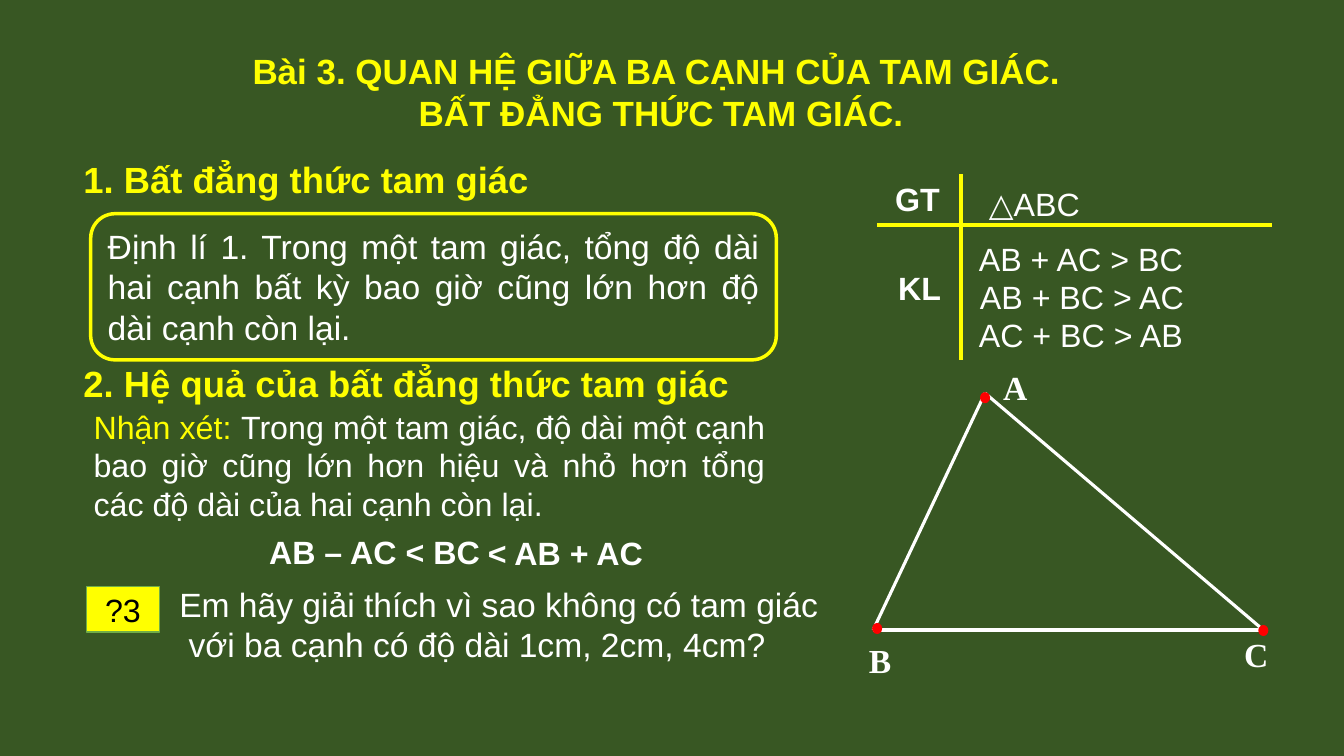
from lxml import etree
from pptx import Presentation
from pptx.dml.color import RGBColor
from pptx.enum.shapes import MSO_CONNECTOR, MSO_SHAPE
from pptx.enum.text import MSO_ANCHOR, PP_ALIGN
from pptx.oxml.ns import qn
from pptx.util import Inches, Pt

COLORS = {
    "board": "385723",
    "yellow": "FFFF00",
    "white": "FFFFFF",
    "black": "000000",
    "green": "70AD47",
    "red": "FF0000",
}
COLORS = {name: RGBColor.from_string(value) for name, value in COLORS.items()}


def write_text(shape, lines, size, color="white", bold=False,
               align=PP_ALIGN.LEFT, font="Arial"):
    frame = shape.text_frame
    frame.word_wrap = True
    frame.text = "\n".join(lines)
    for paragraph in frame.paragraphs:
        paragraph.alignment = align
        paragraph.font.name = font
        paragraph.font.size = Pt(size)
        paragraph.font.bold = bold
        paragraph.font.color.rgb = COLORS[color]
    return frame


def add_line(start, end, color, width):
    line = slide.shapes.add_connector(
        MSO_CONNECTOR.STRAIGHT, *[Inches(value) for value in start + end])
    line.line.color.rgb = COLORS[color]
    line.line.width = Pt(width)
    etree.SubElement(line._element.spPr, qn("a:effectLst"))


presentation = Presentation()
presentation.slide_width = Inches(13.33)
presentation.slide_height = Inches(7.5)
slide = presentation.slides.add_slide(presentation.slide_layouts[6])
slide.background.fill.solid()
slide.background.fill.fore_color.rgb = COLORS["board"]

title = slide.shapes.add_textbox(Inches(2.37), Inches(0.44), Inches(8.37), Inches(0.94))
write_text(title, ["Bài 3. QUAN HỆ GIỮA BA CẠNH CỦA TAM GIÁC. ",
                   "BẤT ĐẲNG THỨC TAM GIÁC."],
           25, "yellow", True, PP_ALIGN.CENTER)

headings = [
    ("1. Bất đẳng thức tam giác", 1.51),
    ("2. Hệ quả của bất đẳng thức tam giác", 3.53),
]
for text, top in headings:
    heading = slide.shapes.add_textbox(Inches(0.73), Inches(top), Inches(6.8), Inches(0.54))
    write_text(heading, [text], 26, "yellow", True)

theorem = slide.shapes.add_shape(
    MSO_SHAPE.ROUNDED_RECTANGLE, Inches(0.9), Inches(2.12), Inches(6.8), Inches(1.45))
theorem.shadow.inherit = False
theorem.fill.background()
theorem.line.color.rgb = COLORS["yellow"]
theorem.line.width = Pt(2.5)
frame = write_text(theorem, ["Định lí 1. Trong một tam giác, tổng độ dài hai cạnh bất kỳ "
                             "bao giờ cũng lớn hơn độ dài cạnh còn lại."],
                   24, align=PP_ALIGN.JUSTIFY)
frame.vertical_anchor = MSO_ANCHOR.TOP
frame.paragraphs[0].space_before = Pt(12)
frame.paragraphs[0].space_after = Pt(6)

remark = slide.shapes.add_textbox(Inches(0.83), Inches(3.99), Inches(6.87), Inches(1.26))
frame = write_text(remark, ["Nhận xét: ",
                            "bao giờ cũng lớn hơn hiệu và nhỏ hơn tổng "
                            "các độ dài của hai cạnh còn lại."],
                   23, align=PP_ALIGN.JUSTIFY)
frame.paragraphs[0].runs[0].font.color.rgb = COLORS["yellow"]
frame.paragraphs[0].add_run().text = "Trong một tam giác, độ dài một cạnh "

add_line((8.7, 2.23), (12.62, 2.23), "yellow", 2.5)
add_line((9.53, 1.73), (9.53, 3.57), "yellow", 2.5)

statements = [
    ("GT", 8.78, 1.73, 0.75, True),
    ("KL", 8.81, 2.61, 0.75, True),
    ("△ABC", 9.71, 1.78, 1.36, False),
    ("AB + AC > BC", 9.61, 2.32, 2.58, False),
    ("AB + BC > AC", 9.62, 2.7, 2.58, False),
    ("AC + BC > AB", 9.61, 3.08, 2.58, False),
    ("AB – AC < BC", 2.57, 5.23, 2.37, True),
    ("< AB + AC", 4.74, 5.24, 1.98, True),
]
for text, left, top, width, bold in statements:
    statement = slide.shapes.add_textbox(
        Inches(left), Inches(top), Inches(width), Inches(0.49))
    write_text(statement, [text], 23, bold=bold)

badge = slide.shapes.add_shape(
    MSO_SHAPE.RECTANGLE, Inches(0.86), Inches(5.82), Inches(0.72), Inches(0.45))
badge.shadow.inherit = False
badge.fill.solid()
badge.fill.fore_color.rgb = COLORS["yellow"]
badge.line.color.rgb = COLORS["green"]
badge.line.width = Pt(1)
write_text(badge, ["?3"], 23, "black", align=PP_ALIGN.CENTER)

question = slide.shapes.add_textbox(Inches(1.68), Inches(5.74), Inches(6.76), Inches(0.91))
write_text(question, ["Em hãy giải thích vì sao không có tam giác",
                      " với ba cạnh có độ dài 1cm, 2cm, 4cm?"],
           24, align=PP_ALIGN.JUSTIFY)

corner_a, corner_b, corner_c = (9.77, 3.9), (8.66, 6.25), (12.53, 6.25)
for start, end in [(corner_a, corner_b), (corner_a, corner_c), (corner_b, corner_c)]:
    add_line(start, end, "white", 2.25)

vertices = [
    ("A", 9.85, 3.59, 9.72, 3.89),
    ("B", 8.52, 6.3, 8.65, 6.18),
    ("C", 12.24, 6.24, 12.48, 6.2),
]
for name, label_left, label_top, dot_left, dot_top in vertices:
    label = slide.shapes.add_textbox(
        Inches(label_left), Inches(label_top), Inches(0.6), Inches(0.64))
    write_text(label, [name], 24, bold=True, font="Times New Roman")
    dot = slide.shapes.add_shape(
        MSO_SHAPE.OVAL, Inches(dot_left), Inches(dot_top), Inches(0.1), Inches(0.11))
    dot.shadow.inherit = False
    dot.fill.solid()
    dot.fill.fore_color.rgb = COLORS["red"]
    dot.line.fill.background()

presentation.save("out.pptx")
